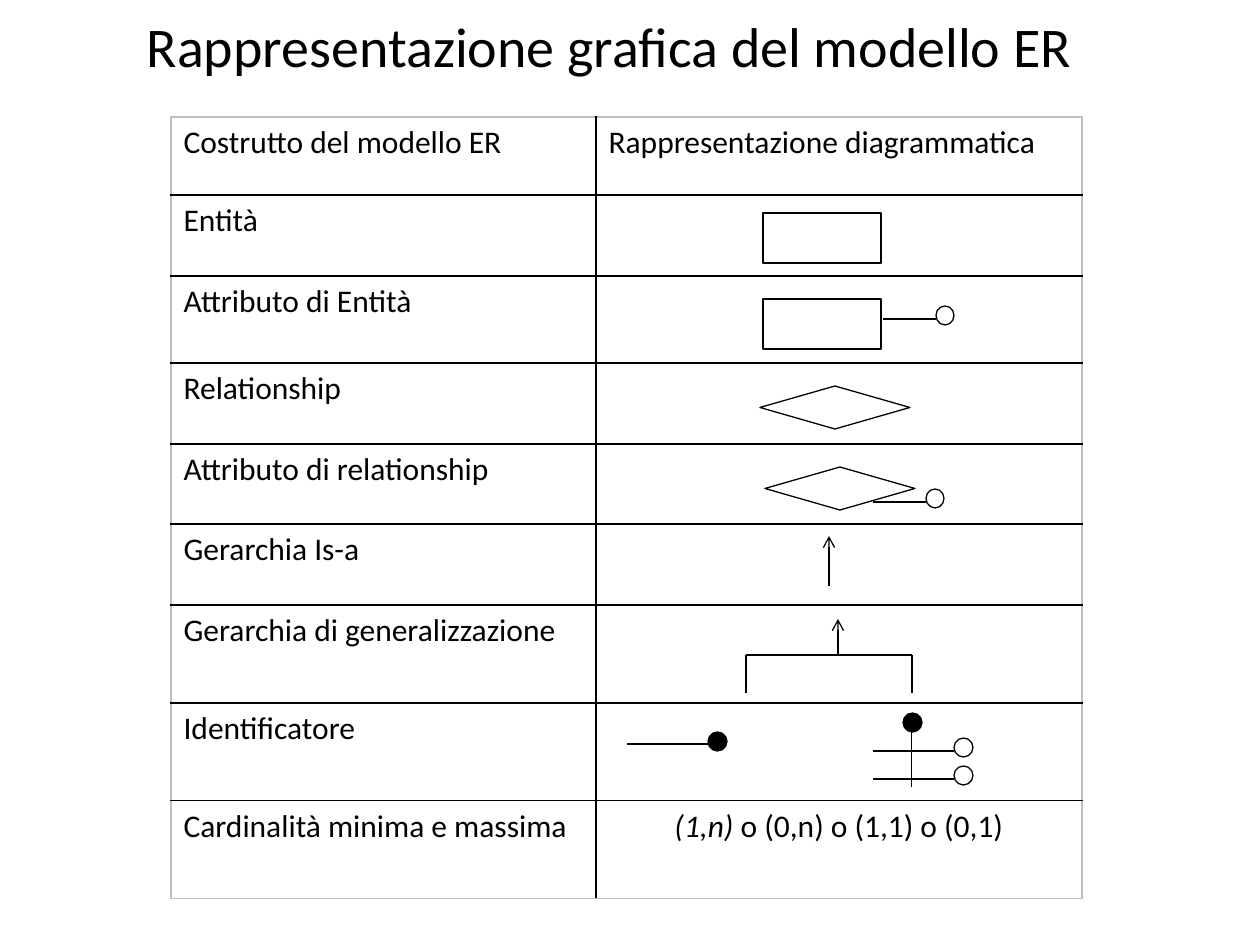
from dataclasses import dataclass

from lxml import etree
from pptx import Presentation
from pptx import util as u
from pptx.dml.color import RGBColor
from pptx.enum import shapes, text
from pptx.oxml.ns import qn

PX = 914400 // 126


@dataclass(frozen=True)
class Theme:
    font: str = "Calibri"
    ink: str = "000000"
    paper: str = "FFFFFF"
    frame: str = "BFBFBF"
    title: int = 32
    body: int = 18
    thin: float = 0.5
    line: float = 0.75
    bold_line: float = 1


T = Theme()
KIND = shapes.MSO_SHAPE

TITLE = "Rappresentazione grafica del modello ER"
HEADER = ("Costrutto del modello ER", "Rappresentazione diagrammatica")
CONSTRUCTS = [
    ("Entità", 81), ("Attributo di Entità", 87), ("Relationship", 81),
    ("Attributo di relationship", 80), ("Gerarchia Is-a", 81),
    ("Gerarchia di generalizzazione", 98), ("Identificatore", 98),
    ("Cardinalità minima e massima", 98),
]
CARDINALITY = [("(1,n)", True), (" o (0,n) o (1,1) o (0,1)", False)]
TABLE_AT = (171, 117)
COLUMNS = (425, 486)
HEADER_HEIGHT = 78

ENTITIES = [(763, 213), (763, 299)]
RELATIONSHIPS = [(760, 386), (765, 467)]
ENTITY_SIZE = (118, 50)
RELATIONSHIP_SIZE = (150, 43)
ATTRIBUTES = [
    (883, 936, 319, 306, 18, None), (873, 926, 502, 489, 18, None),
    (627, 708, 744, 732, 19, T.ink),
    (873, 954, 751, 738, 19, T.paper), (873, 954, 779, 766, 19, T.paper),
]
ARROWS = [(829, 586, 829, 536), (838, 655, 838, 619)]
BRANCHES = [(912, 655, 746, 655), (912, 693, 912, 655), (746, 693, 746, 655)]
COMPOSITE_LINE = (911, 732, 911, 787)
COMPOSITE_DOT = (903, 713, 19, 19)


def px(*values):
    return [u.Emu(v * PX) for v in values]


def add_run(p, words, size, italic=False):
    r = p.add_run()
    r.text = words
    r.font.name, r.font.size, r.font.italic = T.font, u.Pt(size), italic
    r.font.color.rgb = RGBColor.from_string(T.ink)


def add_shape(s, kind, box, fill=None, width=T.line):
    sp = s.shapes.add_shape(kind, *px(*box))
    sp.shadow.inherit = False
    if fill:
        sp.fill.solid()
        sp.fill.fore_color.rgb = RGBColor.from_string(fill)
    else:
        sp.fill.background()
    sp.line.color.rgb = RGBColor.from_string(T.ink)
    sp.line.width = u.Pt(width)


def add_line(s, ends, width=T.line, arrow=False):
    c = s.shapes.add_connector(shapes.MSO_CONNECTOR.STRAIGHT, *px(*ends))
    c.line.color.rgb = RGBColor.from_string(T.ink)
    c.line.width = u.Pt(width)
    if arrow:
        etree.SubElement(c.line._get_or_add_ln(), qn("a:tailEnd"), type="arrow")
    etree.SubElement(c._element.spPr, qn("a:effectLst"))


def set_borders(cell, outer):
    tc_pr = cell._tc.get_or_add_tcPr()
    for i, side in enumerate("LRTB"):
        ln = etree.Element(qn(f"a:ln{side}"), w=str(u.Pt(T.bold_line)))
        fill = etree.SubElement(ln, qn("a:solidFill"))
        etree.SubElement(fill, qn("a:srgbClr"), val=T.frame if side in outer else T.ink)
        tc_pr.insert(i, ln)


def add_title(s):
    sp = s.shapes.add_textbox(*px(16, 11, 1187, 76))
    tf = sp.text_frame
    tf.word_wrap = True
    tf.vertical_anchor = text.MSO_ANCHOR.MIDDLE
    p = tf.paragraphs[0]
    p.alignment = text.PP_ALIGN.CENTER
    p.line_spacing = 0.9
    add_run(p, TITLE, T.title)


def add_constructs(s):
    heights = [HEADER_HEIGHT] + [h for _, h in CONSTRUCTS]
    rows = [[[(name, False)] for name in HEADER]]
    rows += [[[(name, False)], []] for name, _ in CONSTRUCTS]
    rows[-1][1] = CARDINALITY
    box = px(*TABLE_AT, sum(COLUMNS), sum(heights))
    table = s.shapes.add_table(len(rows), len(COLUMNS), *box).table
    table.first_row = table.horz_banding = False
    for column, width in zip(table.columns, px(*COLUMNS)):
        column.width = width
    for i, (row, height) in enumerate(zip(rows, px(*heights))):
        table.rows[i].height = height
        for j, runs in enumerate(row):
            cell = table.cell(i, j)
            cell.fill.background()
            outer = "LR"[j] + ("T" if i == 0 else "B" if i == len(rows) - 1 else "")
            set_borders(cell, outer)
            p = cell.text_frame.paragraphs[0]
            p.font.size = u.Pt(T.body)
            if runs is CARDINALITY:
                p.alignment = text.PP_ALIGN.CENTER
            for words, italic in runs:
                add_run(p, words, T.body, italic)


def add_symbols(s):
    for at in ENTITIES:
        add_shape(s, KIND.RECTANGLE, at + ENTITY_SIZE, width=T.bold_line)
    for at in RELATIONSHIPS:
        add_shape(s, KIND.DIAMOND, at + RELATIONSHIP_SIZE)
    for ends in ARROWS:
        add_line(s, ends, arrow=True)
    for ends in BRANCHES:
        add_line(s, ends)
    for x1, x2, y, top, width, fill in ATTRIBUTES:
        add_line(s, (x1, y, x2, y))
        add_shape(s, KIND.OVAL, (x2, top, width, 19), fill)
    add_line(s, COMPOSITE_LINE, T.thin)
    add_shape(s, KIND.OVAL, COMPOSITE_DOT, T.ink)


def main():
    prs = Presentation()
    prs.slide_width, prs.slide_height = px(1260, 945)
    s = prs.slides.add_slide(prs.slide_layouts[6])
    add_title(s)
    add_constructs(s)
    add_symbols(s)
    prs.save("out.pptx")


if __name__ == "__main__":
    main()
